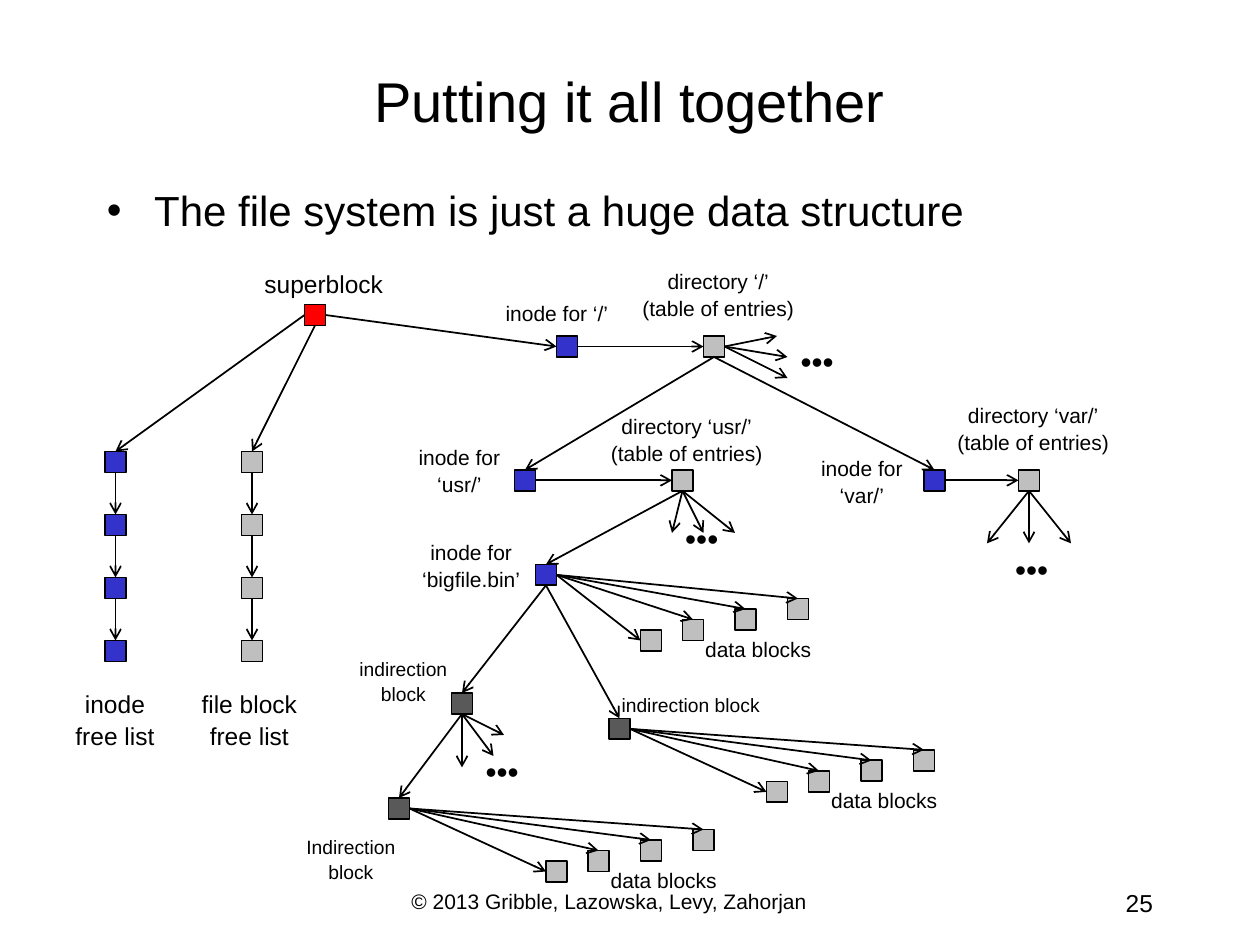
from typing import NamedTuple

from lxml.etree import SubElement as Sub
from pptx import Presentation
from pptx.dml.color import RGBColor as RGB
from pptx.enum.shapes import MSO_CONNECTOR as LINE, MSO_SHAPE as SHAPE
from pptx.enum.text import MSO_ANCHOR as ANCHOR, MSO_AUTO_SIZE as AUTO, PP_ALIGN as ALIGN
from pptx.oxml.ns import qn
from pptx.util import Pt

BLACK = RGB(0x00, 0x00, 0x00)
RED = RGB(0xFF, 0x00, 0x00)
BLUE = RGB(0x33, 0x33, 0xCC)
GRAY = RGB(0xBF, 0xBF, 0xBF)
DARK = RGB(0x59, 0x59, 0x59)
FONT = "Arial"
SIDE = 12
TOP, LEFT, DOWN, RIGHT = range(4)


class Node(NamedTuple):
    name: str
    x: float
    y: float
    fill: RGB


class Link(NamedTuple):
    start: str
    out: int
    end: str
    into: int


class Fan(NamedTuple):
    """Loose arrows from one side of a node."""
    start: str
    out: int
    tips: list[tuple[float, float]]


class Label(NamedTuple):
    text: str
    x: float
    y: float
    w: float
    h: float
    size: float = 12
    align: ALIGN = ALIGN.CENTER


NODES = [
    Node("super", 174, 174, RED),
    Node("root", 318, 192, BLUE),
    Node("root dir", 402, 192, GRAY),
    Node("usr", 294, 268.5, BLUE),
    Node("usr dir", 384, 268.5, GRAY),
    Node("var", 528, 268.5, BLUE),
    Node("var dir", 582, 268.5, GRAY),
    Node("bigfile", 306, 322.5, BLUE),
    Node("left", 258, 396, DARK),
    Node("right", 348, 410.5, DARK),
    Node("low", 222, 456, DARK),
]
LINKS = [
    Link("super", LEFT, "inode 0", TOP),
    Link("super", DOWN, "block 0", TOP),
    Link("super", RIGHT, "root", LEFT),
    Link("root", RIGHT, "root dir", LEFT),
    Link("root dir", DOWN, "usr", TOP),
    Link("root dir", DOWN, "var", TOP),
    Link("usr", RIGHT, "usr dir", LEFT),
    Link("var", RIGHT, "var dir", LEFT),
    Link("usr dir", DOWN, "bigfile", TOP),
    Link("bigfile", DOWN, "left", TOP),
    Link("bigfile", DOWN, "right", TOP),
    Link("left", DOWN, "low", TOP),
]
FANS = [
    Fan("root dir", RIGHT, [(444, 192), (450, 204), (450, 216)]),
    Fan("usr dir", DOWN, [(384, 304.5), (402, 304.5), (420, 304.5)]),
    Fan("var dir", DOWN, [(564, 310.5), (588, 310.5), (612, 310.5)]),
    Fan("left", DOWN, [(264, 438.5), (282, 432), (288, 420)]),
]
LABELS = [
    Label("superblock", 143, 150, 84, 24.5, 14),
    Label("inode\nfree list", 35.5, 390, 60.5, 43, 14),
    Label("file block\nfree list", 107.5, 390, 70, 43, 14),
    Label("inode for ‘/’", 281.5, 168, 73.5, 21.5),
    Label("directory ‘/’\n(table of entries)", 359.5, 150, 102, 37.5),
    Label("inode for\n‘usr/’", 231.5, 250.5, 62, 37.5),
    Label("directory ‘usr/’\n(table of entries)", 341.5, 232.5, 102, 37.5),
    Label("inode for\n‘var/’", 461.5, 256.5, 62, 37.5),
    Label("directory ‘var/’\n(table of entries)", 539.5, 226.5, 102, 37.5),
    Label("inode for\n‘bigfile.bin’", 234, 304.5, 70.5, 37.5),
    Label("indirection\nblock", 198, 372, 65, 35.5, 11),
    Label("indirection block", 347.5, 392.5, 94.5, 20, 11),
    Label("Indirection\nblock", 168, 474, 65, 35.5, 11),
]
DOTS = [(450, 192), (384, 293), (572.5, 310.5), (270, 426)]
LABELS += [Label("•••", x, y, 34, 29, 18) for x, y in DOTS]

# Free lists: vertical chains
for kind, x, fill in (("inode", 60, BLUE), ("block", 138, GRAY)):
    NODES += [Node(f"{kind} {i}", x, 258 + 36 * i, fill) for i in range(4)]
    LINKS += [Link(f"{kind} {i}", DOWN, f"{kind} {i + 1}", TOP) for i in range(3)]

# Data blocks: four rising steps for each parent
for root, x, y in (("bigfile", 366, 360), ("right", 438, 446.5), ("low", 312, 492)):
    for i, step in enumerate((0, 24, 54, 84)):
        name = f"{root} data {i}"
        NODES.append(Node(name, x + step, y - 6 * i, GRAY))
        LINKS.append(Link(root, RIGHT, name, TOP if i else LEFT))
    LABELS.append(Label("data blocks", x + 29, y, 76.5, 21.5))


def draw_node(slide, node: Node):
    box = slide.shapes.add_shape(
        SHAPE.RECTANGLE, Pt(node.x), Pt(node.y), Pt(SIDE), Pt(SIDE))
    box.shadow.inherit = False
    box.fill.solid()
    box.fill.fore_color.rgb = node.fill
    box.line.color.rgb = BLACK
    box.line.width = Pt(1)
    return box


def draw_arrow(slide, start, out: int, tip: tuple[float, float] = (0, 0)):
    """Draw an arrow from a side of a shape to a point."""
    x, y = map(Pt, tip)
    line = slide.shapes.add_connector(LINE.STRAIGHT, x, y, x, y)
    line.begin_connect(start, out)
    line.line.color.rgb = BLACK
    line.line.width = Pt(1)
    prop = line.line._get_or_add_ln()
    Sub(prop, qn("a:tailEnd"), type="arrow")
    Sub(prop.getparent(), qn("a:effectLst"))
    return line


def draw_text(slide, label: Label, wrap: bool = True):
    box = slide.shapes.add_textbox(
        Pt(label.x), Pt(label.y), Pt(label.w), Pt(label.h))
    frame = box.text_frame
    frame.word_wrap = wrap
    if wrap:
        frame.auto_size = AUTO.NONE
    else:
        frame.auto_size = AUTO.SHAPE_TO_FIT_TEXT
        frame.margin_left = frame.margin_right = Pt(3)
    frame.text = label.text
    for i, para in enumerate(frame.paragraphs):
        para.alignment = label.align
        if i:
            para.space_before = Pt(label.size / 10)
        for run in para.runs:
            run.font.name = FONT
            run.font.size = Pt(label.size)
            run.font.color.rgb = BLACK
    return frame


def add_bullet(para):
    prop = para._p.get_or_add_pPr()
    prop.set("marL", str(Pt(27)))
    prop.set("indent", str(Pt(-27)))
    Sub(prop, qn("a:buFont"), typeface=FONT)
    Sub(prop, qn("a:buChar"), char="•")


def main():
    deck = Presentation()
    deck.slide_width, deck.slide_height = Pt(720), Pt(540)
    slide = deck.slides.add_slide(deck.slide_layouts[6])

    title = draw_text(slide, Label("Putting it all together", 54, 30, 612, 54, 32))
    title.vertical_anchor = ANCHOR.MIDDLE
    body = draw_text(slide, Label("The file system is just a huge data structure",
                                  54, 102, 612, 42, 24, ALIGN.LEFT))
    add_bullet(body.paragraphs[0])
    draw_text(slide, Label("25", 516, 504, 150, 24, 14, ALIGN.RIGHT))
    draw_text(slide, Label("© 2013 Gribble, Lazowska, Levy, Zahorjan",
                           228, 504, 264, 24, 12, ALIGN.LEFT))

    boxes = {node.name: draw_node(slide, node) for node in NODES}
    for link in LINKS:
        line = draw_arrow(slide, boxes[link.start], link.out)
        line.end_connect(boxes[link.end], link.into)
    for fan in FANS:
        for tip in fan.tips:
            draw_arrow(slide, boxes[fan.start], fan.out, tip)
    for label in LABELS:
        draw_text(slide, label, wrap=False)
    deck.save("out.pptx")


if __name__ == "__main__":
    main()
